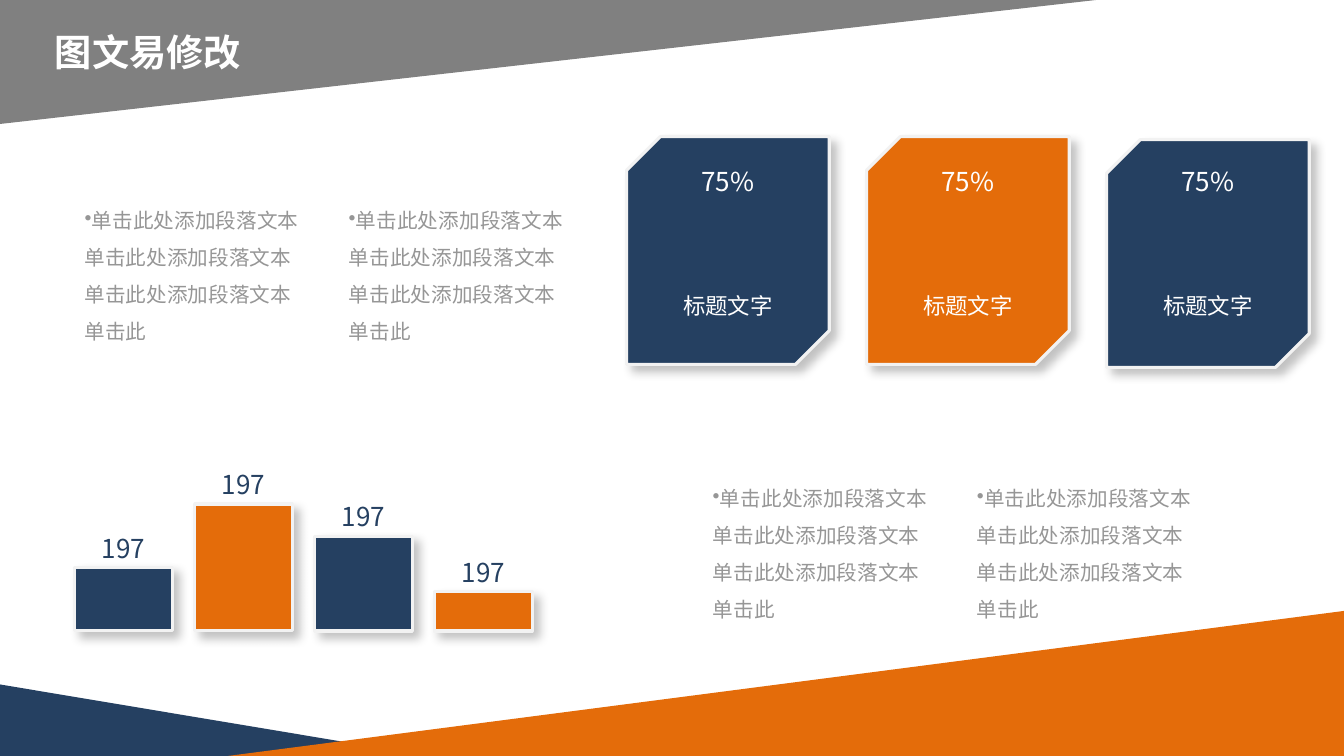
from lxml.etree import SubElement
from pptx import Presentation
from pptx.dml.color import RGBColor
from pptx.enum.shapes import MSO_SHAPE
from pptx.enum.text import MSO_AUTO_SIZE, PP_ALIGN
from pptx.oxml.ns import qn
from pptx.util import Inches, Pt

NAVY = RGBColor(0x25, 0x40, 0x61)
ORANGE = RGBColor(0xE4, 0x6C, 0x0A)
GRAY = RGBColor(0x80, 0x80, 0x80)
TEXT_GRAY = RGBColor(0x96, 0x96, 0x96)
EDGE = RGBColor(0xF2, 0xF2, 0xF2)
WHITE = RGBColor(0xFF, 0xFF, 0xFF)

PARAGRAPH_TEXT = "单击此处添加段落文本" * 3 + "单击此"


class SlideBuilder:
    font = "Noto Sans CJK SC"

    def __init__(self, page):
        self.page = page

    def shape(self, kind, left, top, width, height, color, rotation=0):
        shape = self.page.shapes.add_shape(
            kind, Inches(left), Inches(top), Inches(width), Inches(height))
        shape.shadow.inherit = False
        shape.fill.solid()
        shape.fill.fore_color.rgb = color
        shape.line.fill.background()
        shape.rotation = rotation
        return shape

    def wedge(self, left, top, width, height, color, rotation=0, flip=False):
        wedge = self.shape(MSO_SHAPE.RIGHT_TRIANGLE, left, top, width, height,
                           color, rotation)
        if flip:
            wedge.element.spPr.get_or_add_xfrm().set("flipH", "1")

    def raised(self, kind, left, top, width, height, color, rotation=0):
        """Add a shape with a light edge and a soft shadow to the lower right."""
        shape = self.shape(kind, left, top, width, height, color, rotation)
        shape.line.color.rgb = EDGE
        shape.line.width = Pt(2.25)
        effects = shape.element.spPr.find(qn("a:effectLst"))
        shadow = SubElement(effects, qn("a:outerShdw"), blurRad=str(Pt(7)),
                            dist=str(Pt(5.9)), dir="2700000", algn="tl",
                            rotWithShape="0")
        black = SubElement(shadow, qn("a:srgbClr"), val="000000")
        SubElement(black, qn("a:alpha"), val="23000")

    def text(self, words, left, top, width, height, size, color,
             align=PP_ALIGN.CENTER):
        box = self.page.shapes.add_textbox(
            Inches(left), Inches(top), Inches(width), Inches(height))
        frame = box.text_frame
        frame.text = words
        frame.word_wrap = True
        frame.auto_size = MSO_AUTO_SIZE.SHAPE_TO_FIT_TEXT
        para = frame.paragraphs[0]
        para.alignment = align
        span = para.runs[0]
        span.font.name = self.font
        span.font.size = Pt(size)
        span.font.color.rgb = color
        SubElement(span.font._element, qn("a:ea"), typeface=self.font)
        return box

    def title(self, words):
        box = self.text(words, 0, 0.29, 2.94, 0.45, 26.6, WHITE)
        frame = box.text_frame
        frame.margin_left = frame.margin_right = Inches(0)
        frame.margin_top = frame.margin_bottom = Inches(0)
        frame.paragraphs[0].runs[0].font.bold = True

    def bullet_text(self, left, top):
        box = self.text(PARAGRAPH_TEXT, left, top, 2.42, 1.58, 14.7, TEXT_GRAY,
                        PP_ALIGN.LEFT)
        para = box.text_frame.paragraphs[0]
        para.line_spacing = 1.5
        para.space_before = Pt(13.3)
        SubElement(para._p.get_or_add_pPr(), qn("a:buChar"), char="•")

    def card(self, left, top, color):
        self.raised(MSO_SHAPE.SNIP_2_DIAG_RECTANGLE, left, top, 2.26, 2.01,
                    color, rotation=90)
        self.text("75%", left + 0.42, 1.59, 1.42, 0.42, 18.6, WHITE)
        self.text("标题文字", left + 0.42, 2.85, 1.42, 0.37, 16, WHITE)

    def bar(self, left, height, color):
        base, width = 6.26, 0.97
        top = base - height
        self.raised(MSO_SHAPE.RECTANGLE, left, top, width, height, color)
        self.text("197", left, top - 0.4, width, 0.42, 18.6, NAVY)


def main():
    deck = Presentation()
    deck.slide_width = Inches(13.33)
    deck.slide_height = Inches(7.5)
    builder = SlideBuilder(deck.slides.add_slide(deck.slide_layouts[6]))

    builder.wedge(0, 6.79, 4.25, 0.71, NAVY)
    builder.wedge(2.26, 6.06, 11.08, 1.44, ORANGE, flip=True)
    builder.wedge(0, 0, 10.87, 1.23, GRAY, rotation=180, flip=True)

    for index, (top, color) in enumerate(
            [(1.48, NAVY), (1.48, ORANGE), (1.51, NAVY)]):
        builder.card(6.09 + index * 2.38, top, color)

    for index, (height, color) in enumerate(
            [(0.63, NAVY), (1.26, ORANGE), (0.94, NAVY), (0.39, ORANGE)]):
        builder.bar(0.74 + index * 1.19, height, color)

    for left, top in [(0.74, 1.89), (6.97, 4.65)]:
        for column in range(2):
            builder.bullet_text(left + column * 2.62, top)

    builder.title("图文易修改")
    deck.save("out.pptx")


if __name__ == "__main__":
    main()
